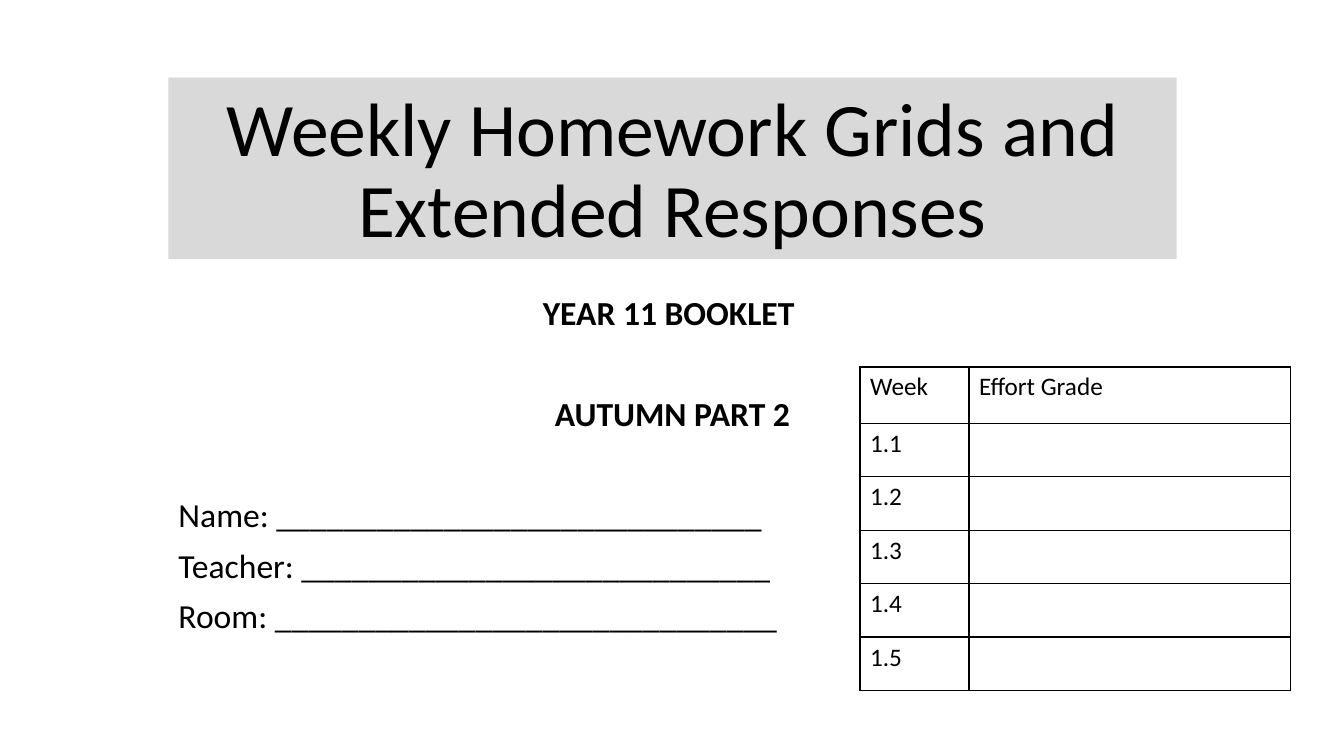
from pptx import Presentation
from pptx.dml.color import RGBColor
from pptx.enum.text import MSO_ANCHOR, MSO_AUTO_SIZE, PP_ALIGN
from pptx.oxml import parse_xml
from pptx.oxml.ns import nsdecls
from pptx.util import Inches, Pt

COLORS = {"ink": "000000", "banner": "D9D9D9"}
FONT = "Calibri"
LINE_GAP = 10
SECTION_GAP = 46.4


def write_paragraph(paragraph, text, size=24, bold=False, align=PP_ALIGN.LEFT,
                    spacing=0.9, before=0):
    paragraph.alignment = align
    paragraph.line_spacing = spacing
    paragraph.space_before = Pt(before)
    run = paragraph.add_run()
    run.text = text
    run.font.name = FONT
    run.font.size = Pt(size)
    run.font.bold = bold
    run.font.color.rgb = RGBColor.from_string(COLORS["ink"])


def place(placeholder, left, top, width, height, anchor):
    placeholder.left, placeholder.top = Inches(left), Inches(top)
    placeholder.width, placeholder.height = Inches(width), Inches(height)
    frame = placeholder.text_frame
    frame.word_wrap = True
    frame.auto_size = MSO_AUTO_SIZE.NONE
    frame.vertical_anchor = anchor
    return frame


def add_title(slide, left, top, width, height):
    banner = slide.shapes.title
    frame = place(banner, left, top, width, height, MSO_ANCHOR.BOTTOM)
    banner.fill.solid()
    banner.fill.fore_color.rgb = RGBColor.from_string(COLORS["banner"])
    write_paragraph(frame.paragraphs[0], "Weekly Homework Grids and Extended Responses",
                    size=54, align=PP_ALIGN.CENTER)


def add_booklet_details(slide, left, top, width, height):
    frame = place(slide.placeholders[1], left, top, width, height, MSO_ANCHOR.TOP)
    heading = {"bold": True, "align": PP_ALIGN.CENTER}
    details = [
        ("YEAR 11 BOOKLET ", LINE_GAP, heading),
        ("AUTUMN PART 2", SECTION_GAP, heading),
        ("Name: " + "_" * 29, SECTION_GAP, {}),
        ("Teacher: " + "_" * 28, LINE_GAP, {}),
        ("Room: " + "_" * 30, LINE_GAP, {}),
    ]
    for index, (text, before, style) in enumerate(details):
        paragraph = frame.add_paragraph() if index else frame.paragraphs[0]
        write_paragraph(paragraph, text, before=before, **style)


def outline_cell(cell):
    properties = cell._tc.get_or_add_tcPr()
    for side in ("lnL", "lnR", "lnT", "lnB"):
        properties.append(parse_xml(
            f'<a:{side} {nsdecls("a")} w="12700"><a:solidFill>'
            f'<a:srgbClr val="{COLORS["ink"]}"/></a:solidFill></a:{side}>'))
    cell.fill.background()


def add_effort_table(slide, left, top, width, height):
    week_width, header_height = 1.08, 0.56
    entries = [("Week\u00a0", "Effort Grade")] + [(f"1.{week}", "") for week in range(1, 6)]
    grades = slide.shapes.add_table(len(entries), 2, Inches(left), Inches(top),
                                    Inches(width), Inches(height)).table
    grades.first_row = False
    grades.horz_banding = False
    grades.columns[0].width = Inches(week_width)
    grades.columns[1].width = Inches(width - week_width)
    week_height = (height - header_height) / (len(entries) - 1)
    for row_index, entry in enumerate(entries):
        grades.rows[row_index].height = Inches(week_height if row_index else header_height)
        for column_index, text in enumerate(entry):
            cell = grades.cell(row_index, column_index)
            outline_cell(cell)
            if text:
                write_paragraph(cell.text_frame.paragraphs[0], text, size=18, spacing=1.0)


def build_cover(presentation):
    slide = presentation.slides.add_slide(presentation.slide_layouts[0])
    add_title(slide, 1.67, 0.77, 10, 1.8)
    add_booklet_details(slide, 1.67, 2.89, 10, 3.71)
    add_effort_table(slide, 8.53, 3.64, 4.27, 3.21)


def main():
    presentation = Presentation()
    presentation.slide_width = Inches(13.33)
    presentation.slide_height = Inches(7.5)
    build_cover(presentation)
    presentation.save("out.pptx")


if __name__ == "__main__":
    main()
